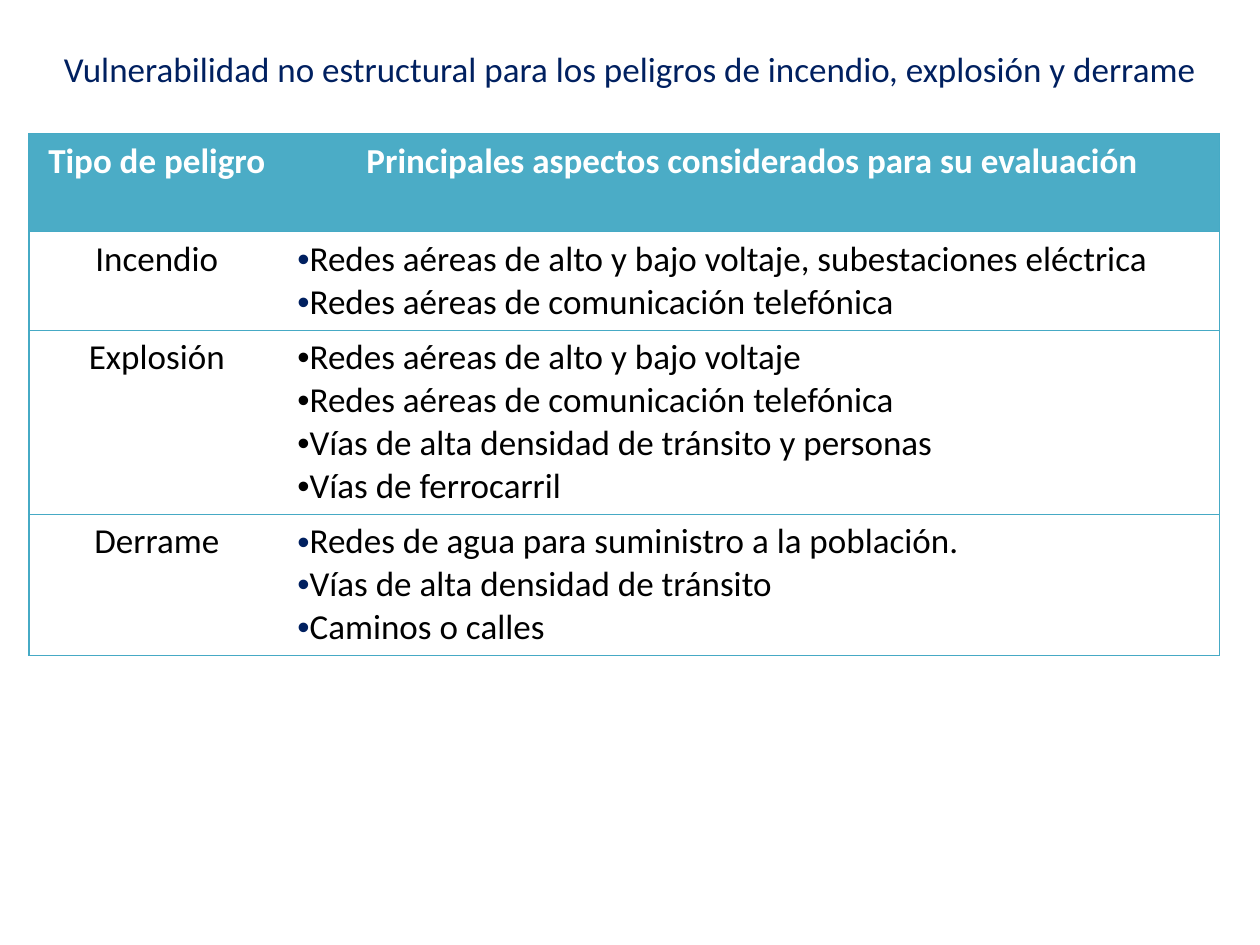
import dataclasses

import lxml.etree
import pptx
import pptx.dml.color
import pptx.enum.text
import pptx.oxml.ns
import pptx.util

Inches = pptx.util.Inches
qn = pptx.oxml.ns.qn
PP_ALIGN = pptx.enum.text.PP_ALIGN
MSO_ANCHOR = pptx.enum.text.MSO_ANCHOR


@dataclasses.dataclass(frozen=True)
class Theme:
    font: str = "Calibri"
    size: int = 20
    navy: str = "002060"
    header: str = "4BACC6"
    border: str = "46AAC5"
    border_width: float = 0.75
    white: str = "FFFFFF"
    black: str = "000000"


THEME = Theme()
TITLE = "Vulnerabilidad no estructural para los peligros de incendio, explosión y derrame"
HEADERS = ["Tipo de peligro", "Principales aspectos considerados para su evaluación"]
HAZARDS = [
    ("Incendio", THEME.navy, [
        "Redes aéreas de alto y bajo voltaje, subestaciones eléctrica",
        "Redes aéreas de comunicación telefónica",
    ]),
    ("Explosión", THEME.black, [
        "Redes aéreas de alto y bajo voltaje",
        "Redes aéreas de comunicación telefónica",
        "Vías de alta densidad de tránsito y personas",
        "Vías de ferrocarril",
    ]),
    ("Derrame", THEME.navy, [
        "Redes de agua para suministro a la población.",
        "Vías de alta densidad de tránsito",
        "Caminos o calles",
    ]),
]
COL_WIDTHS = [2.03, 7.42]
ROW_HEIGHTS = [0.78, 0.78, 1.46, 1.12]


def rgb(color):
    return pptx.dml.color.RGBColor.from_string(color)


def format_text(tf, color, align, bold=False):
    for p in tf.paragraphs:
        p.alignment = align
        for r in p.runs:
            r.font.name = THEME.font
            r.font.size = pptx.util.Pt(THEME.size)
            r.font.bold = bold
            r.font.color.rgb = rgb(color)


def add_bullets(tf, color):
    for p in tf.paragraphs:
        pPr = p._p.get_or_add_pPr()
        pPr.set("marL", "0")
        pPr.set("indent", "0")
        clr = lxml.etree.SubElement(pPr, qn("a:buClr"))
        lxml.etree.SubElement(clr, qn("a:srgbClr"), val=color)
        lxml.etree.SubElement(pPr, qn("a:buFont"), typeface="Arial")
        lxml.etree.SubElement(pPr, qn("a:buChar"), char="•")


def set_borders(cell, visible):
    tcPr = cell._tc.get_or_add_tcPr()
    width = str(int(pptx.util.Pt(THEME.border_width)))
    for side in "LRTB":
        ln = lxml.etree.SubElement(tcPr, qn(f"a:ln{side}"), w=width)
        if side in visible:
            fill = lxml.etree.SubElement(ln, qn("a:solidFill"))
            lxml.etree.SubElement(fill, qn("a:srgbClr"), val=THEME.border)
        else:
            lxml.etree.SubElement(ln, qn("a:noFill"))


def style_cell(cell, fill, borders):
    set_borders(cell, borders)
    cell.fill.solid()
    cell.fill.fore_color.rgb = rgb(fill)
    cell.vertical_anchor = MSO_ANCHOR.TOP


def add_title(s, left, top, width, height):
    sp = s.shapes.title
    sp.left, sp.top, sp.width, sp.height = left, top, width, height
    tf = sp.text_frame
    tf.text = TITLE
    tf.word_wrap = True
    tf.auto_size = pptx.enum.text.MSO_AUTO_SIZE.NONE
    tf.vertical_anchor = MSO_ANCHOR.MIDDLE
    format_text(tf, THEME.navy, PP_ALIGN.CENTER)


def add_hazard_table(s, left, top, width, height):
    table = s.shapes.add_table(len(ROW_HEIGHTS), len(COL_WIDTHS),
                               left, top, width, height).table
    table.horz_banding = False
    for col, share in zip(table.columns, COL_WIDTHS):
        col.width = int(width * share / sum(COL_WIDTHS))
    for row, share in zip(table.rows, ROW_HEIGHTS):
        row.height = int(height * share / sum(ROW_HEIGHTS))
    for i, row in enumerate(table.rows):
        for cell, side in zip(row.cells, "LR"):
            style_cell(cell, THEME.white if i else THEME.header, side + "TB")
    for cell, text in zip(table.rows[0].cells, HEADERS):
        cell.text_frame.text = text
        format_text(cell.text_frame, THEME.white, PP_ALIGN.CENTER, bold=True)
    for i, (hazard, bullet_color, aspects) in enumerate(HAZARDS, start=1):
        name, details = table.cell(i, 0).text_frame, table.cell(i, 1).text_frame
        name.text = hazard
        format_text(name, THEME.black, PP_ALIGN.CENTER)
        details.text = "\n".join(aspects)
        format_text(details, THEME.black, PP_ALIGN.LEFT)
        add_bullets(details, bullet_color)


def main():
    prs = pptx.Presentation()
    prs.slide_width, prs.slide_height = Inches(10), Inches(7.5)
    s = prs.slides.add_slide(prs.slide_layouts[5])
    add_title(s, 0, Inches(0.3), prs.slide_width, Inches(0.48))
    add_hazard_table(s, Inches(0.23), Inches(1.06),
                     Inches(sum(COL_WIDTHS)), Inches(sum(ROW_HEIGHTS)))
    prs.save("out.pptx")


if __name__ == "__main__":
    main()
